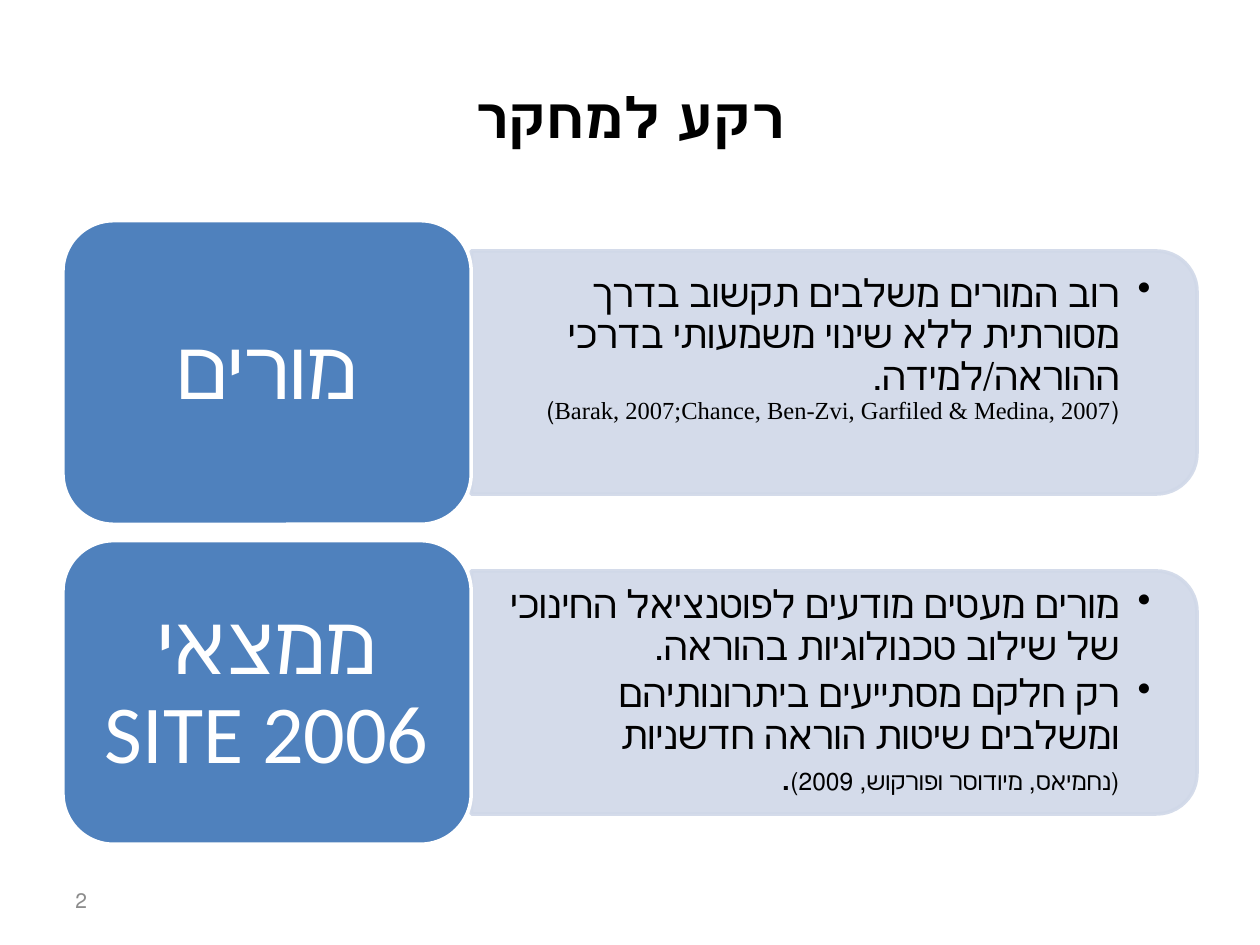
from lxml.etree import SubElement
from pptx import Presentation
from pptx.dml.color import RGBColor
from pptx.enum.shapes import MSO_SHAPE as Shape
from pptx.enum.text import MSO_ANCHOR as Anchor, PP_ALIGN as Align
from pptx.oxml.ns import qn
from pptx.util import Cm, Pt

BLACK = RGBColor(0x00, 0x00, 0x00)
WHITE = RGBColor(0xFF, 0xFF, 0xFF)
BLUE = RGBColor(0x4F, 0x81, 0xBD)
PALE = RGBColor(0xD0, 0xD8, 0xE8)
GREY = RGBColor(0x8C, 0x8C, 0x8C)

FONT = "Calibri"
CITATION_FONT = "Times New Roman"
LEFT = 1.27
FIRST_TOP, ROW_PITCH = 4.45, 6.45
LABEL_WIDTH, LABEL_HEIGHT = 8.23, 6.12
PANEL_WIDTH, PANEL_HEIGHT = 14.63, 4.9
TEXT_WIDTH, TEXT_HEIGHT = 14.4, 4.42

ROWS = [
    ("מורים", [
        [("רוב המורים משלבים תקשוב בדרך מסורתית ללא שינוי משמעותי בדרכי ההוראה/למידה.\n", 22, FONT),
         ("(Barak, 2007;Chance, Ben-Zvi, Garfiled & Medina, 2007) \n", 14, CITATION_FONT)],
    ]),
    ("ממצאי SITE 2006", [
        [("מורים מעטים מודעים לפוטנציאל החינוכי של שילוב טכנולוגיות בהוראה.", 22, FONT)],
        [("רק חלקם מסתייעים ביתרונותיהם ומשלבים שיטות הוראה חדשניות\n", 22, FONT),
         ("(נחמיאס, מיודוסר ופורקוש, 2009)", 14, FONT),
         (".", 22, FONT)],
    ]),
]


def format_para(para, size, color, align, bold=None):
    para.alignment = align
    para._p.get_or_add_pPr().set("rtl", "1")
    para.font.name = FONT
    para.font.size = Pt(size)
    para.font.color.rgb = color
    para.font.bold = bold


def set_frame(frame, side, edge):
    frame.word_wrap = True
    frame.vertical_anchor = Anchor.MIDDLE
    frame.margin_left = frame.margin_right = Cm(side)
    frame.margin_top = frame.margin_bottom = Cm(edge)


def add_bullet(para):
    properties = para._p.get_or_add_pPr()
    properties.set("lvl", "1")
    properties.set("marL", str(Cm(0.64)))
    properties.set("indent", str(-Cm(0.64)))
    bullet = SubElement(properties, qn("a:buChar"))
    bullet.set("char", "•")
    properties.append(properties.find(qn("a:defRPr")))


def add_block(page, kind, left, top, width, height, fill, line):
    block = page.shapes.add_shape(kind, Cm(left), Cm(top), Cm(width), Cm(height))
    block.shadow.inherit = False
    block.fill.solid()
    block.fill.fore_color.rgb = fill
    block.line.color.rgb = line
    block.line.width = Pt(2)
    return block


def make_translucent(block, percent):
    for color in block._element.spPr.iter(qn("a:srgbClr")):
        SubElement(color, qn("a:alpha")).set("val", str(percent * 1000))


def add_panel(page, middle):
    left = LEFT + LABEL_WIDTH + (PANEL_WIDTH - PANEL_HEIGHT) / 2
    panel = add_block(page, Shape.ROUND_2_SAME_RECTANGLE, left, middle - PANEL_WIDTH / 2,
                      PANEL_HEIGHT, PANEL_WIDTH, PALE, PALE)
    panel.rotation = 90
    make_translucent(panel, 90)


def add_points(page, middle, points):
    box = page.shapes.add_textbox(Cm(LEFT + LABEL_WIDTH), Cm(middle - TEXT_HEIGHT / 2),
                                  Cm(TEXT_WIDTH), Cm(TEXT_HEIGHT))
    frame = box.text_frame
    set_frame(frame, 0.69, 0.36)
    for index, pieces in enumerate(points):
        para = frame.add_paragraph() if index else frame.paragraphs[0]
        format_para(para, 22, BLACK, Align.RIGHT)
        para.line_spacing = 0.9
        para.space_after = Pt(3.3)
        add_bullet(para)
        for text, size, font in pieces:
            span = para.add_run()
            span.text = text.rstrip("\n")
            span.font.size = Pt(size)
            span.font.name = font
            if text.endswith("\n"):
                para.add_line_break()


def add_label(page, middle, text):
    label = add_block(page, Shape.ROUNDED_RECTANGLE, LEFT, middle - LABEL_HEIGHT / 2,
                      LABEL_WIDTH, LABEL_HEIGHT, BLUE, WHITE)
    set_frame(label.text_frame, 0.5, 0.25)
    para = label.text_frame.paragraphs[0]
    para.text = text
    para.line_spacing = 0.9
    format_para(para, 47, WHITE, Align.CENTER)


def add_title(page, text):
    title = page.shapes.title
    title.left, title.top, title.width, title.height = Cm(LEFT), Cm(0.76), Cm(22.86), Cm(3.18)
    title.text_frame.vertical_anchor = Anchor.MIDDLE
    title.text_frame.text = text
    format_para(title.text_frame.paragraphs[0], 32, BLACK, Align.CENTER, True)


def add_page_number(page, number):
    box = page.shapes.add_textbox(Cm(LEFT), Cm(17.65), Cm(5.93), Cm(1.01))
    set_frame(box.text_frame, 0.25, 0.13)
    para = box.text_frame.paragraphs[0]
    para.text = number
    format_para(para, 12, GREY, Align.LEFT)


def main():
    deck = Presentation()
    deck.slide_width, deck.slide_height = Cm(25.4), Cm(19.05)
    page = deck.slides.add_slide(deck.slide_layouts[5])
    add_title(page, "רקע למחקר")
    for index, (label, points) in enumerate(ROWS):
        middle = FIRST_TOP + LABEL_HEIGHT / 2 + index * ROW_PITCH
        add_panel(page, middle)
        add_points(page, middle, points)
        add_label(page, middle, label)
    add_page_number(page, "2")
    deck.save("out.pptx")


if __name__ == "__main__":
    main()
